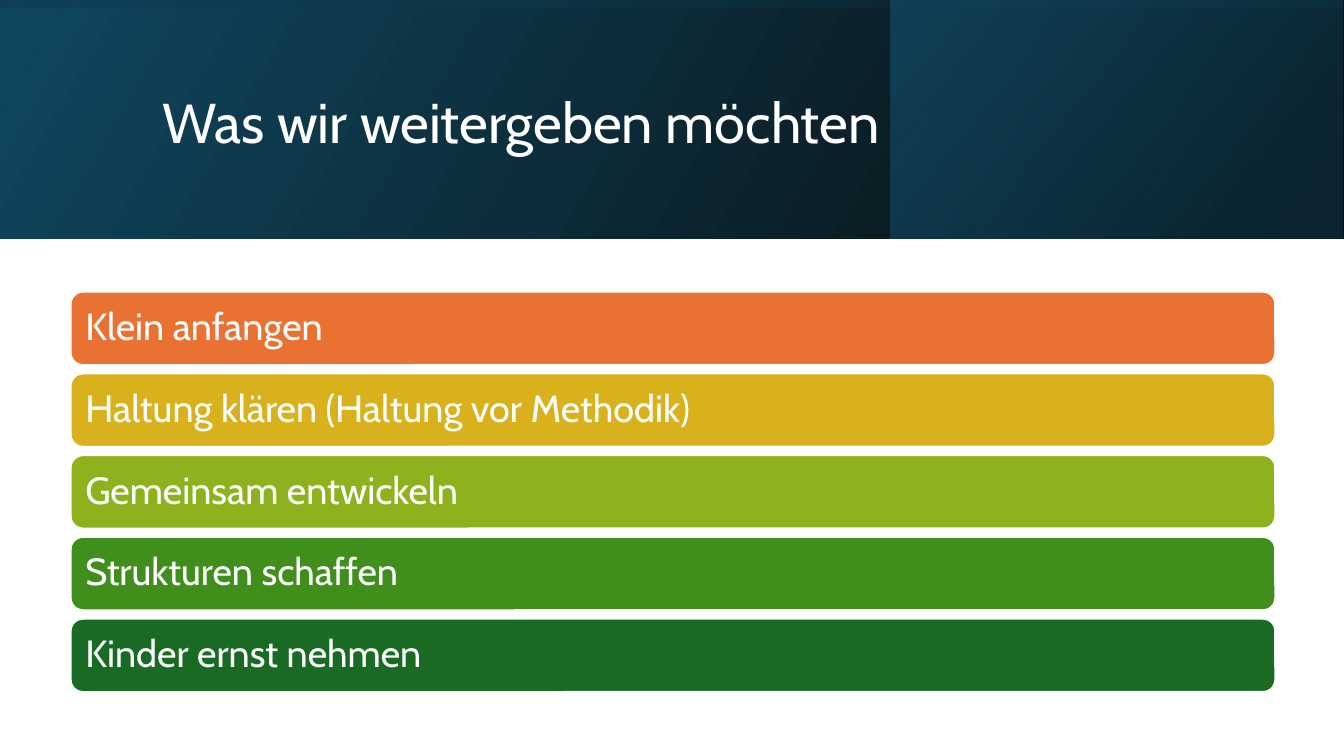
"""Builds the slide "Was wir weitergeben möchten" with a gradient header and five coloured bars."""
import lxml.etree
import pptx
import pptx.dml.color
import pptx.enum.shapes
import pptx.enum.text
import pptx.oxml.ns
import pptx.util

Cm = pptx.util.Cm
SHAPES = pptx.enum.shapes.MSO_SHAPE


def rgb(value):
    return pptx.dml.color.RGBColor.from_string(value)


def write(shape, text, size):
    frame = shape.text_frame
    frame.text = text
    frame.word_wrap = True
    frame.auto_size = pptx.enum.text.MSO_AUTO_SIZE.NONE
    frame.vertical_anchor = pptx.enum.text.MSO_ANCHOR.MIDDLE
    paragraph = frame.paragraphs[0]
    paragraph.alignment = pptx.enum.text.PP_ALIGN.LEFT
    paragraph.line_spacing = 0.9
    font = paragraph.runs[0].font
    font.name = "Cabin"
    font.size = pptx.util.Pt(size)
    font.color.rgb = rgb("FFFFFF")


presentation = pptx.Presentation()
presentation.slide_width = Cm(33.87)
presentation.slide_height = Cm(19.05)
slide = presentation.slides.add_slide(presentation.slide_layouts[5])

header_height = 6.02
header_panels = [
    ((0, 0, 33.87, header_height), 0, 330, [(0, "000000", 96), (100, "104862", 100)]),
    ((22.45, 0, 11.39, header_height), 0, 320, [(19, "0B3041", 68), (100, "156082", 48)]),
    ((13.92, -13.92, header_height, 33.87), 270, 350, [(23, "104862", 16), (99, "000000", 45)]),
]
for box, rotation, angle, stops in header_panels:
    panel = slide.shapes.add_shape(SHAPES.RECTANGLE, *map(Cm, box))
    panel.shadow.inherit = False
    panel.rotation = rotation
    panel.element.spPr.get_or_add_xfrm().set("flipH", "1")
    panel.line.fill.background()
    panel.fill.gradient()
    panel.fill.gradient_angle = 360 - angle
    for stop, (position, color, opacity) in zip(panel.fill.gradient_stops, stops):
        stop.position = position / 100
        stop.color.rgb = rgb(color)
    color_elements = panel.element.spPr.findall(".//" + pptx.oxml.ns.qn("a:gs") + "/" + pptx.oxml.ns.qn("a:srgbClr"))
    for color_element, (position, color, opacity) in zip(color_elements, stops):
        alpha = lxml.etree.SubElement(color_element, pptx.oxml.ns.qn("a:alpha"))
        alpha.set("val", str(opacity * 1000))

title = slide.shapes.title
title.left, title.top, title.width, title.height = map(Cm, (3.84, 0.97, 27, 4.37))
write(title, "Was wir weitergeben möchten", 40)
slide.shapes.element.append(title.element)

bars = [
    ("Klein anfangen", "E97132"),
    ("Haltung klären (Haltung vor Methodik)", "D8B11D"),
    ("Gemeinsam entwickeln", "8EB21E"),
    ("Strukturen schaffen", "408E1C"),
    ("Kinder ernst nehmen", "196B24"),
]
for index, (text, color) in enumerate(bars):
    bar = slide.shapes.add_shape(
        SHAPES.ROUNDED_RECTANGLE, Cm(1.78), Cm(7.35 + index * 2.06), Cm(30.36), Cm(1.85))
    bar.shadow.inherit = False
    bar.fill.solid()
    bar.fill.fore_color.rgb = rgb(color)
    bar.line.color.rgb = rgb("FFFFFF")
    bar.line.width = pptx.util.Pt(1.5)
    write(bar, text, 27)
    bar.text_frame.margin_left = bar.text_frame.margin_right = Cm(0.28)
    bar.text_frame.margin_top = bar.text_frame.margin_bottom = Cm(0.28)

presentation.save("out.pptx")
